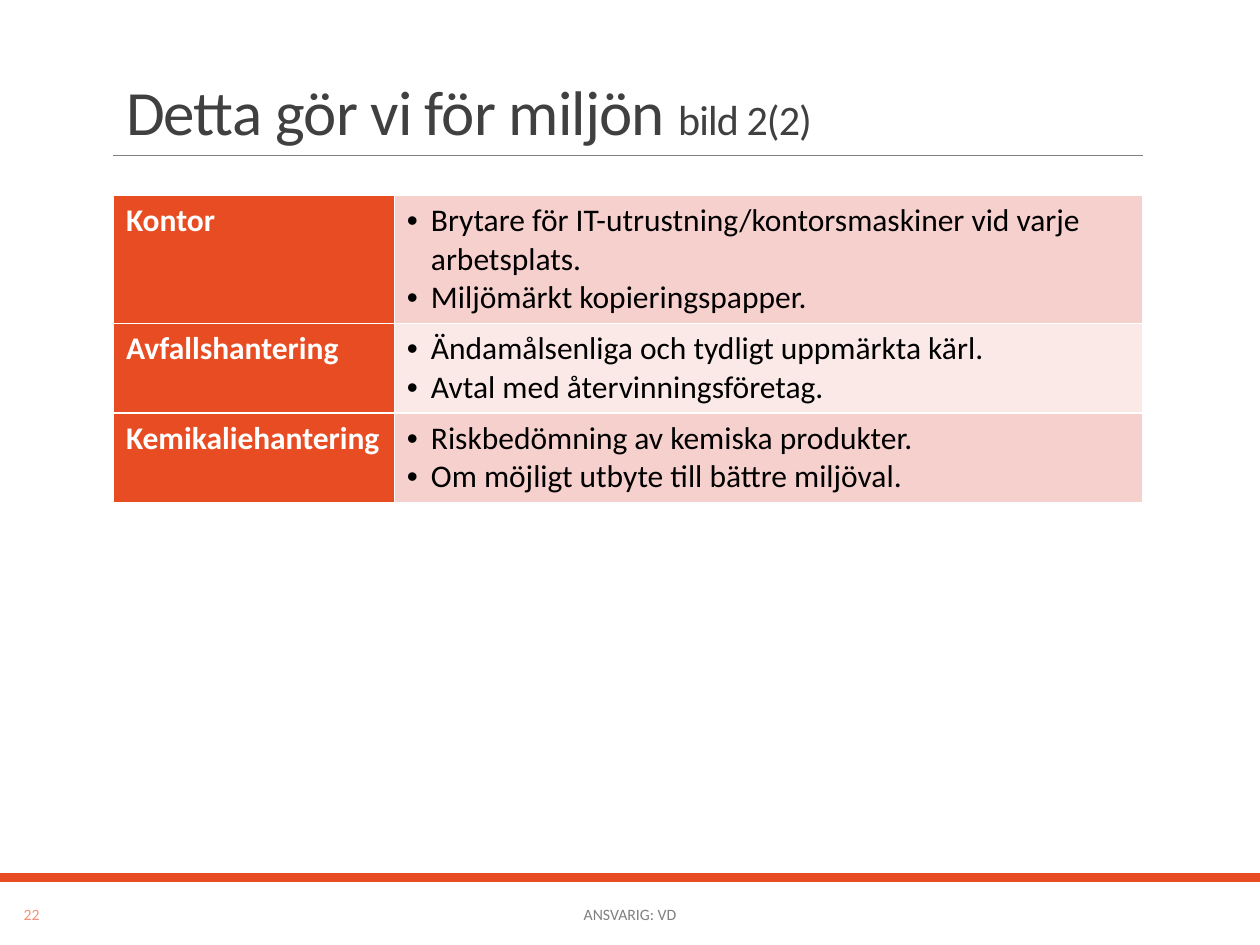
from lxml import etree
from pptx import Presentation
from pptx import util as u
from pptx.dml.color import RGBColor
from pptx.enum import shapes, text
from pptx.oxml import ns

ORANGE = RGBColor(0xE8, 0x4C, 0x22)
PALE_ORANGE = RGBColor(0xF1, 0x94, 0x7A)
PINK = RGBColor(0xF6, 0xD0, 0xCD)
PALE_PINK = RGBColor(0xFB, 0xE9, 0xE8)
DARK = RGBColor(0x40, 0x40, 0x40)
GREY = RGBColor(0x80, 0x80, 0x80)
BLACK = RGBColor(0, 0, 0)
WHITE = RGBColor(0xFF, 0xFF, 0xFF)
FONT = "Calibri"

WIDTH, HEIGHT = u.Inches(10), u.Inches(7.5)
MEASURES = [
    ("Kontor", ["Brytare för IT-utrustning/kontorsmaskiner vid varje arbetsplats.",
                "Miljömärkt kopieringspapper."]),
    ("Avfallshantering", ["Ändamålsenliga och tydligt uppmärkta kärl.",
                          "Avtal med återvinningsföretag."]),
    ("Kemikaliehantering", ["Riskbedömning av kemiska produkter.",
                            "Om möjligt utbyte till bättre miljöval."]),
]
ROW_HEIGHTS = [1.01, 0.71, 0.71]


def box(left, top, width, height):
    return [u.Inches(v) for v in (left, top, width, height)]


def add_run(p, wording, size, color, bold=False):
    r = p.add_run()
    r.text = wording
    r.font.name, r.font.size, r.font.bold = FONT, u.Pt(size), bold
    r.font.color.rgb = color
    return r


def add_title(s, area):
    left, top, width, height = area
    sp = s.shapes.title
    sp.left, sp.top, sp.width, sp.height = area
    tf = sp.text_frame
    tf.vertical_anchor = text.MSO_ANCHOR.BOTTOM
    tf.auto_size = text.MSO_AUTO_SIZE.NONE
    p = tf.paragraphs[0]
    p.alignment = text.PP_ALIGN.LEFT
    p.line_spacing = 0.85
    for wording, size in (("Detta gör vi för miljön ", 36), ("bild 2(2)", 24)):
        r = add_run(p, wording, size, DARK)
        r.font._element.set("spc", "-50")

    bottom = top + height
    rule = s.shapes.add_connector(shapes.MSO_CONNECTOR.STRAIGHT, left, bottom,
                                  left + u.Inches(8.17), bottom)
    rule.line.color.rgb = GREY
    rule.line.width = u.Pt(0.5)
    etree.SubElement(rule._element.spPr, ns.qn("a:effectLst"))


def add_bullet(p):
    pPr = p._p.get_or_add_pPr()
    pPr.set("marL", str(u.Inches(0.19)))
    pPr.set("indent", str(-u.Inches(0.19)))
    etree.SubElement(pPr, ns.qn("a:buFont")).set("typeface", "Arial")
    etree.SubElement(pPr, ns.qn("a:buChar")).set("char", "•")


def style_cell(cell, fill):
    """Give the cell thin white borders and a solid fill."""
    tcPr = cell._tc.get_or_add_tcPr()
    for side in ("lnL", "lnR", "lnT", "lnB"):
        ln = etree.SubElement(tcPr, ns.qn("a:" + side), w=str(u.Pt(1)))
        solid = etree.SubElement(ln, ns.qn("a:solidFill"))
        etree.SubElement(solid, ns.qn("a:srgbClr")).set("val", str(WHITE))
    cell.fill.solid()
    cell.fill.fore_color.rgb = fill


def add_measures(s, area):
    table = s.shapes.add_table(len(MEASURES), 2, *area).table
    table.first_row = False
    table.columns[0].width = u.Inches(2.23)
    table.columns[1].width = area[2] - u.Inches(2.23)
    for i, (heading, points) in enumerate(MEASURES):
        table.rows[i].height = u.Inches(ROW_HEIGHTS[i])
        head, body = table.cell(i, 0), table.cell(i, 1)
        style_cell(head, ORANGE)
        style_cell(body, PALE_PINK if i % 2 else PINK)
        add_run(head.text_frame.paragraphs[0], heading, 18, WHITE, True)
        tf = body.text_frame
        for j, point in enumerate(points):
            p = tf.add_paragraph() if j else tf.paragraphs[0]
            add_bullet(p)
            add_run(p, point, 18, BLACK)


def add_footer(s, area):
    """Draw the coloured band with the page number and owner below it."""
    left, top, width, height = area
    band = s.shapes.add_shape(shapes.MSO_SHAPE.RECTANGLE, left, top, width, u.Inches(0.07))
    band.shadow.inherit = False
    band.fill.solid()
    band.fill.fore_color.rgb = ORANGE
    band.line.fill.background()
    for wording, x, w, color in (("22", 0.04, 0.42, PALE_ORANGE),
                                 ("ANSVARIG: VD", 3.02, 3.96, GREY)):
        sp = s.shapes.add_textbox(left + u.Inches(x), top + u.Inches(0.13),
                                  u.Inches(w), u.Inches(0.4))
        tf = sp.text_frame
        tf.word_wrap = True
        tf.vertical_anchor = text.MSO_ANCHOR.MIDDLE
        p = tf.paragraphs[0]
        p.alignment = text.PP_ALIGN.CENTER
        add_run(p, wording, 9, color)


def main():
    prs = Presentation()
    prs.slide_width, prs.slide_height = WIDTH, HEIGHT
    s = prs.slides.add_slide(prs.slide_layouts[5])
    add_title(s, box(0.9, 0.31, 8.25, 0.92))
    add_measures(s, box(0.9, 1.55, 8.17, sum(ROW_HEIGHTS)))
    add_footer(s, box(0, 6.93, 10, 0.57))
    prs.save("out.pptx")


if __name__ == "__main__":
    main()
